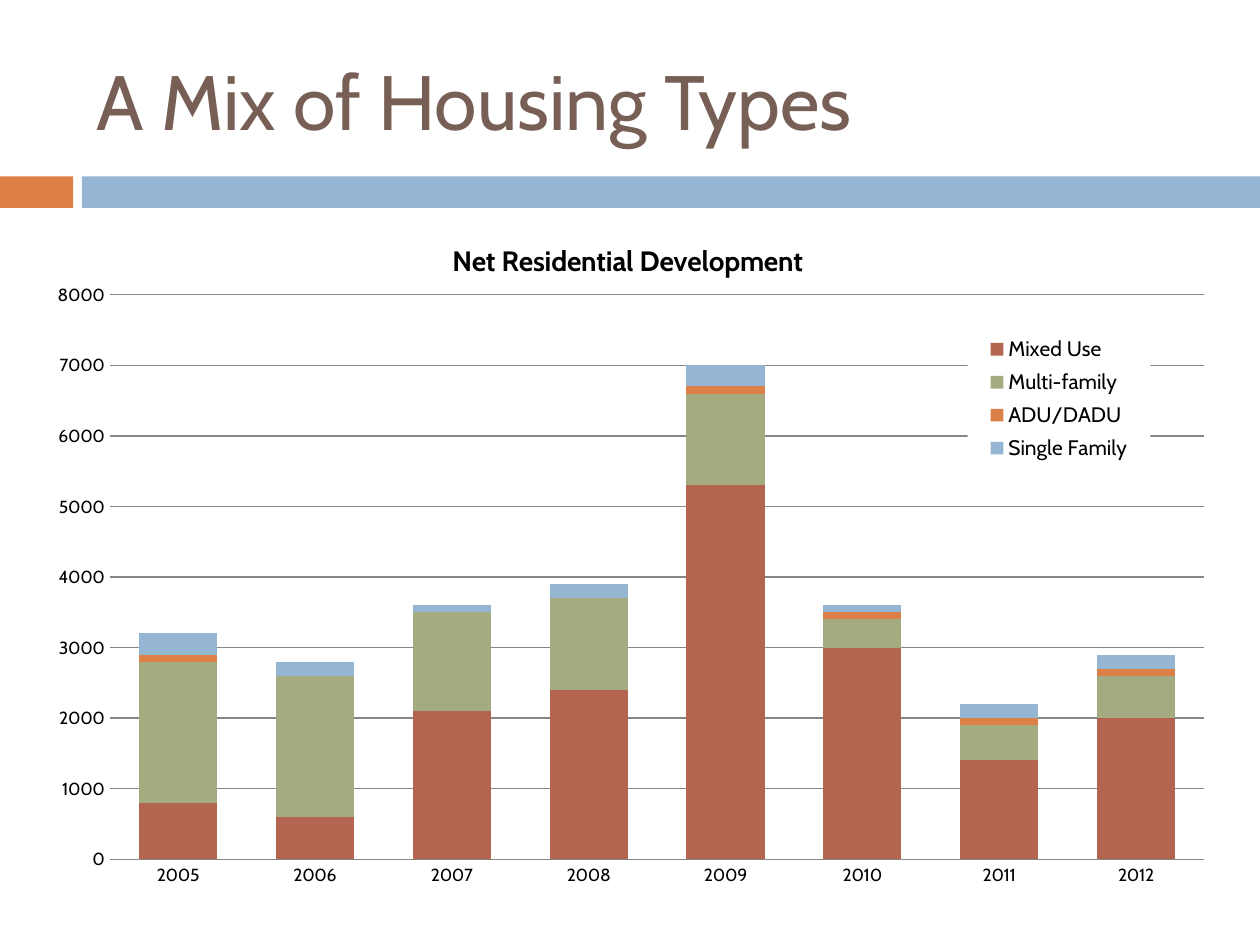
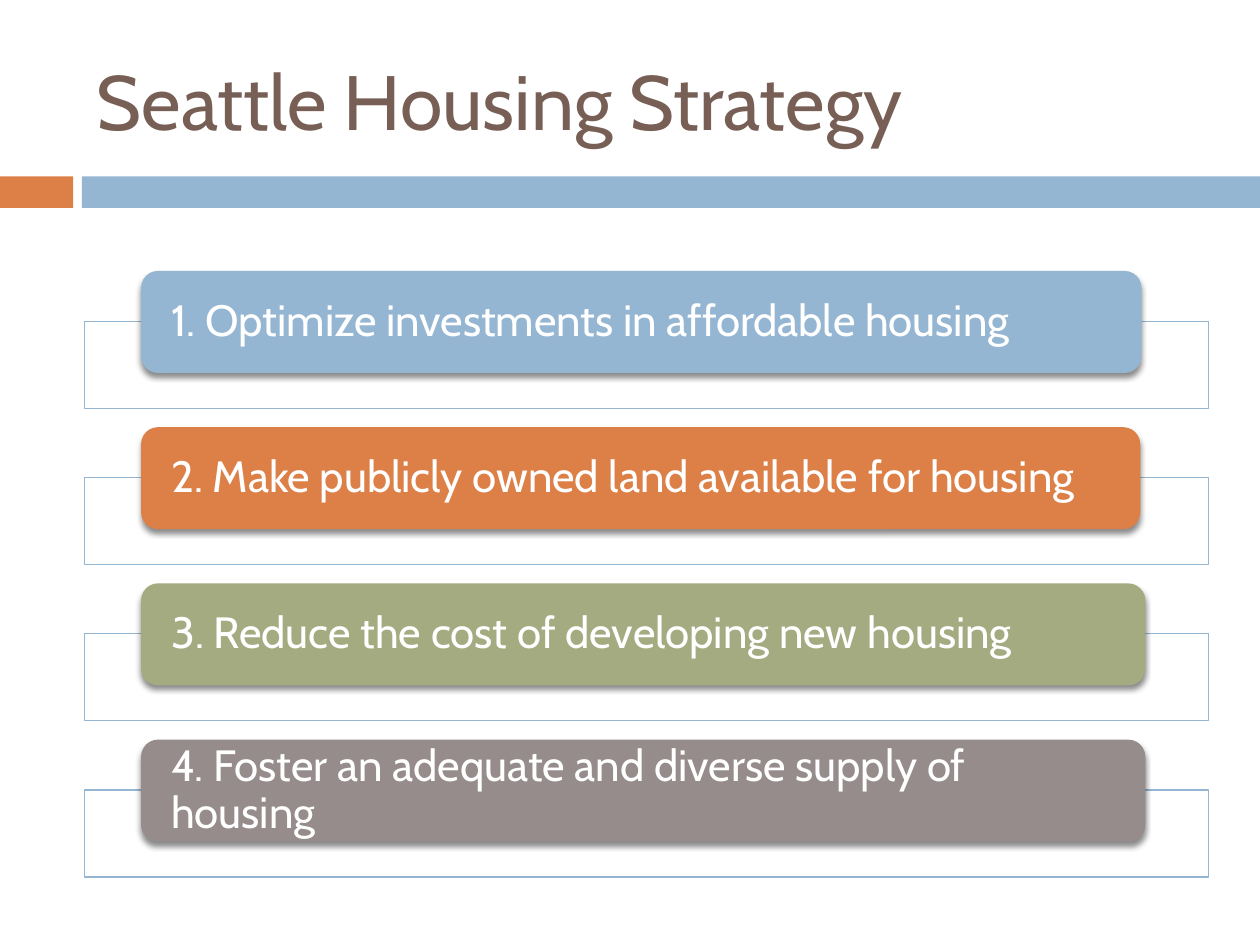
from dataclasses import dataclass

import pptx
import pptx.chart.data
import pptx.dml.color
import pptx.enum.chart
import pptx.enum.shapes
import pptx.enum.text
import pptx.oxml
import pptx.oxml.ns
import pptx.util

PX = 9144  # EMU per px, 100 px to the inch
FONT = "Cabin"
WHITE, BLACK, BROWN, GRID = "FFFFFF", "000000", "775F55", "868686"
BLUE, ORANGE, GREEN, RED, GRAY = "94B6D2", "DD8047", "A5AB81", "B46550", "968C8C"
RECT = pptx.enum.shapes.MSO_SHAPE.RECTANGLE
ROUNDED = pptx.enum.shapes.MSO_SHAPE.ROUNDED_RECTANGLE


@dataclass(frozen=True)
class Box:
    left: int
    top: int
    width: int = 0
    height: int = 0

    def emu(self) -> tuple[int, ...]:
        return tuple(v * PX for v in (self.left, self.top, self.width, self.height))


@dataclass(frozen=True)
class Series:
    name: str
    color: str
    values: tuple[int, ...]


@dataclass(frozen=True)
class Strategy:
    text: str
    color: str
    width: int


CHART = Box(17, 172, 964, 563)
YEARS = [str(year) for year in range(2005, 2013)]
HOUSING = [
    Series("Mixed Use", RED, (800, 600, 2100, 2400, 5300, 3000, 1400, 2000)),
    Series("Multi-family", GREEN, (2000, 2000, 1400, 1300, 1300, 400, 500, 600)),
    Series("ADU/DADU", ORANGE, (100, 0, 0, 0, 100, 100, 100, 100)),
    Series("Single Family", BLUE, (300, 200, 100, 200, 300, 100, 200, 200)),
]
STRATEGIES = [
    Strategy("1. Optimize investments in affordable housing", BLUE, 794),
    Strategy("2. Make publicly owned land available for housing", ORANGE, 793),
    Strategy("3. Reduce the cost of developing new housing", GREEN, 797),
    Strategy("4. Foster an adequate and diverse supply of housing", GRAY, 797),
]
STRATEGY_STEP = 124


def rgb(color: str) -> pptx.dml.color.RGBColor:
    return pptx.dml.color.RGBColor.from_string(color)


def paint(target, color: str) -> None:
    """Give a shape or chart format a solid fill."""
    target.fill.solid()
    target.fill.fore_color.rgb = rgb(color)


def set_font(font, size: int, color: str, bold: bool = False) -> None:
    font.name = FONT
    font.size = pptx.util.Pt(size)
    font.bold = bold
    font.color.rgb = rgb(color)


def add_block(s, box: Box, color: str, kind=RECT, line: str = ""):
    sp = s.shapes.add_shape(kind, *box.emu())
    sp.shadow.inherit = False
    paint(sp, color)
    if line:
        sp.line.color.rgb = rgb(line)
        sp.line.width = pptx.util.Pt(0.79)
    else:
        sp.line.fill.background()
    return sp


def write(sp, text: str, size: int, color: str):
    """Put one left-aligned, vertically centred paragraph in a shape."""
    tf = sp.text_frame
    tf.word_wrap = True
    tf.vertical_anchor = pptx.enum.text.MSO_ANCHOR.MIDDLE
    p = tf.paragraphs[0]
    p.text = text
    p.alignment = pptx.enum.text.PP_ALIGN.LEFT
    set_font(p.font, size, color)
    return p


def add_titled_slide(prs, title: str):
    s = prs.slides.add_slide(prs.slide_layouts[6])
    add_block(s, Box(0, 140, 58, 25), ORANGE)
    add_block(s, Box(65, 140, 935, 25), BLUE)
    write(s.shapes.add_textbox(*Box(67, 25, 892, 108).emu()), title, 44, BROWN)
    return s


def place(element, index: int, box: Box, target: str = "") -> None:
    """Set a chart part's manual layout from a box relative to the chart."""
    for old in element.findall(pptx.oxml.ns.qn("c:layout")):
        element.remove(old)
    fractions = {"x": box.left / CHART.width, "y": box.top / CHART.height}
    if box.width:
        fractions |= {"w": box.width / CHART.width, "h": box.height / CHART.height}
    inner = f'<c:layoutTarget val="{target}"/>' if target else ""
    inner += '<c:xMode val="edge"/><c:yMode val="edge"/>'
    inner += "".join(f'<c:{k} val="{v}"/>' for k, v in fractions.items())
    element.insert(index, pptx.oxml.parse_xml(
        f'<c:layout {pptx.oxml.ns.nsdecls("c")}><c:manualLayout>{inner}'
        "</c:manualLayout></c:layout>"))


def style_legend(chart) -> None:
    chart.has_legend = True
    legend = chart.legend
    legend.position = pptx.enum.chart.XL_LEGEND_POSITION.BOTTOM
    legend.include_in_layout = False
    set_font(legend.font, 12, BLACK)
    element = legend._element
    place(element, 1, Box(751, 89, 145, 111))
    element.find(pptx.oxml.ns.qn("c:txPr")).addprevious(pptx.oxml.parse_xml(
        f'<c:spPr {pptx.oxml.ns.nsdecls("c", "a")}><a:solidFill>'
        f'<a:srgbClr val="{WHITE}"/></a:solidFill></c:spPr>'))


def style_axes(chart) -> None:
    years, units = chart.category_axis, chart.value_axis
    for axis in (years, units):
        axis.major_tick_mark = pptx.enum.chart.XL_TICK_MARK.NONE
        axis.minor_tick_mark = pptx.enum.chart.XL_TICK_MARK.NONE
        set_font(axis.tick_labels.font, 10, BLACK)
    units.minimum_scale, units.maximum_scale, units.major_unit = 0, 8000, 1000
    units.has_major_gridlines = True
    units.format.line.fill.background()
    for line in (years.format.line, units.major_gridlines.format.line):
        line.color.rgb = rgb(GRID)
        line.width = pptx.util.Pt(0.75)


def add_housing_chart(s) -> None:
    data = pptx.chart.data.CategoryChartData()
    data.categories = YEARS
    for series in HOUSING:
        data.add_series(series.name, series.values)
    chart = s.shapes.add_chart(pptx.enum.chart.XL_CHART_TYPE.COLUMN_STACKED,
                               *CHART.emu(), data).chart
    set_font(chart.font, 10, BLACK)

    chart.has_title = True
    p = chart.chart_title.text_frame.paragraphs[0]
    p.text = "Net Residential Development"
    set_font(p.font, 16, BLACK, bold=True)
    place(chart.chart_title._element, 1, Box(338, 16))

    plot = chart.plots[0]
    plot.gap_width, plot.overlap, plot.vary_by_categories = 75, 100, False
    for bars, series in zip(plot.series, HOUSING):
        paint(bars.format, series.color)
    place(chart._chartSpace.chart.plotArea, 0, Box(70, 62, 869, 448), "inner")
    style_axes(chart)
    style_legend(chart)


def add_shadow(sp) -> None:
    effects = sp._element.spPr.find(pptx.oxml.ns.qn("a:effectLst"))
    effects.append(pptx.oxml.parse_xml(
        f'<a:outerShdw {pptx.oxml.ns.nsdecls("a")} blurRad="{pptx.util.Pt(3)}" '
        f'dist="{pptx.util.Pt(2.4)}" dir="5400000" rotWithShape="0">'
        f'<a:srgbClr val="{BLACK}"><a:alpha val="45000"/></a:srgbClr></a:outerShdw>'))


def add_strategy(s, strategy: Strategy, offset: int) -> None:
    add_block(s, Box(67, 255 + offset, 892, 69), WHITE, line=BLUE)
    sp = add_block(s, Box(112, 215 + offset, strategy.width, 81), strategy.color, ROUNDED)
    add_shadow(sp)
    write(sp, strategy.text, 25, WHITE).line_spacing = 0.9
    tf = sp.text_frame
    tf.margin_left = tf.margin_right = 20 * PX
    tf.margin_top = tf.margin_bottom = 0


def main() -> None:
    prs = pptx.Presentation()
    prs.slide_width, prs.slide_height = 1000 * PX, 750 * PX
    add_housing_chart(add_titled_slide(prs, "A Mix of Housing Types"))
    s = add_titled_slide(prs, "Seattle Housing Strategy")
    for i, strategy in enumerate(STRATEGIES):
        add_strategy(s, strategy, i * STRATEGY_STEP)
    prs.save("out.pptx")


if __name__ == "__main__":
    main()
